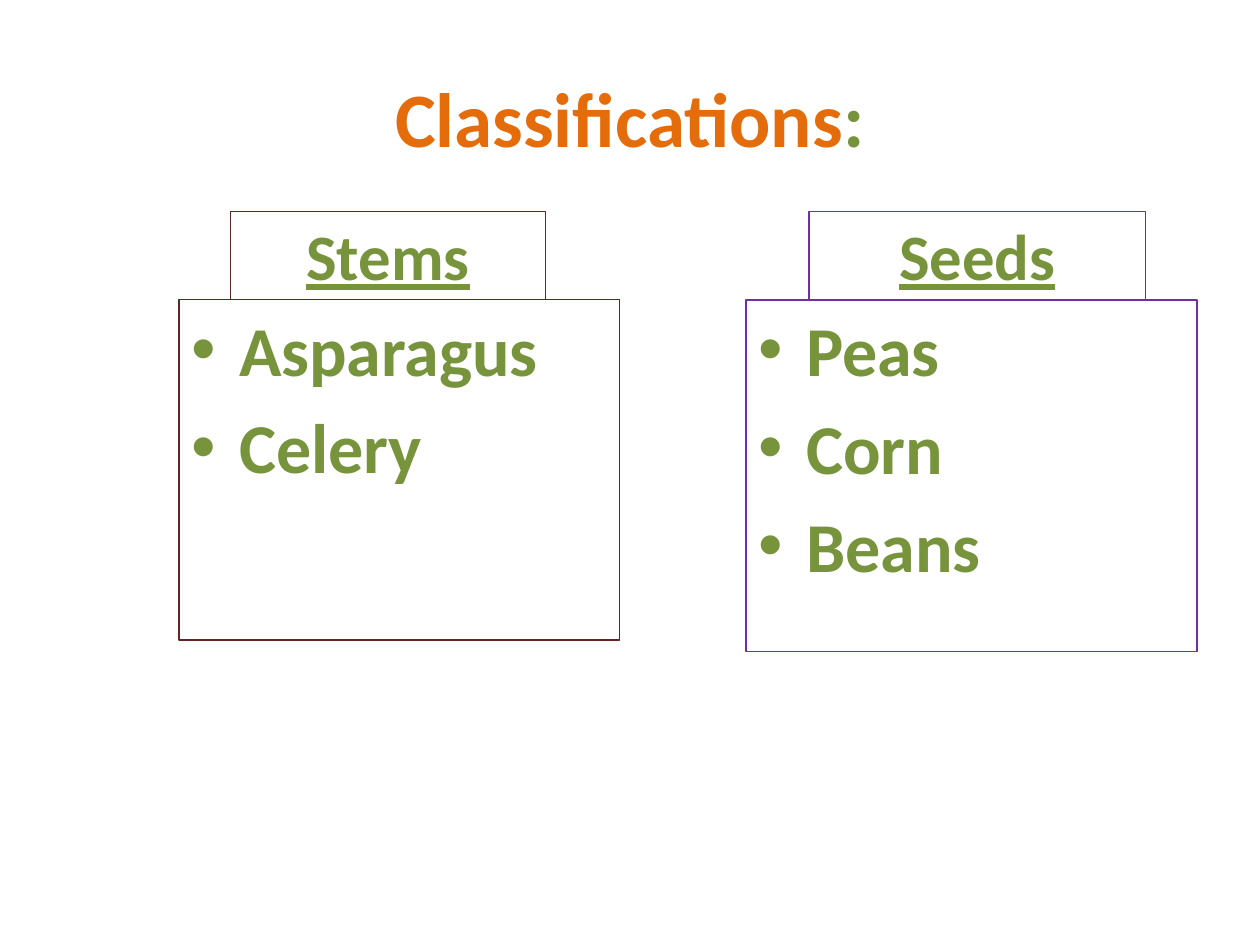
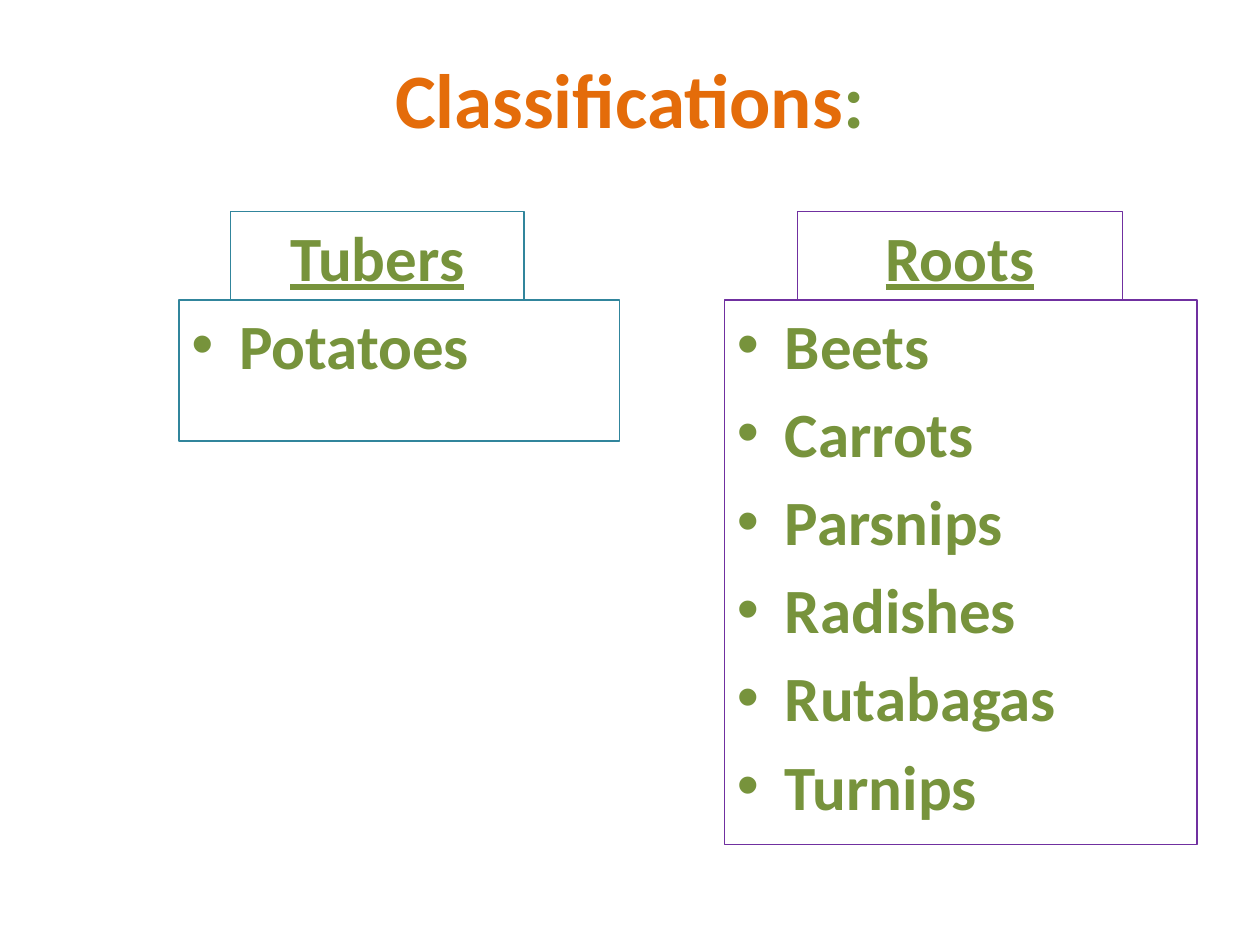
from pptx import Presentation
from pptx.dml.color import RGBColor
from pptx.enum.shapes import MSO_SHAPE
from pptx.enum.text import MSO_ANCHOR, PP_ALIGN
from pptx.util import Inches, Pt
from lxml import etree

RECT = MSO_SHAPE.RECTANGLE
TOP, MID, LOW = MSO_ANCHOR.TOP, MSO_ANCHOR.MIDDLE, MSO_ANCHOR.BOTTOM
LEFT, CENTER = PP_ALIGN.LEFT, PP_ALIGN.CENTER
TITLE_ONLY = 5

FONT = "Calibri"
INK = {"orange": "E46C0A", "green": "77933C", "wine": "632523",
       "violet": "7030A0", "teal": "31859C"}

WIDE, HIGH = 10, 7.5
EDGE = WIDE / 20
HEAD_TOP, LIST_TOP = 1.68, 2.38
INDENT = Inches(0.38)
GAP = 0.2  # space before a bullet, as a share of the text size

# Title height, then groups: name, head size, head (left, width),
# items, item size, list (left, width, height), line colour
SLIDES = [
    (1.25, [
        ("Stems", 37, (1.83, 2.5), ["Asparagus", "Celery"],
         40, (1.42, 3.5, 2.7), "wine"),
        ("Seeds", 37, (6.42, 2.67), ["Peas", "Corn", "Beans"],
         40, (5.92, 3.58, 2.79), "violet"),
    ]),
    (0.95, [
        ("Tubers", 36, (1.83, 2.33), ["Potatoes"],
         36, (1.42, 3.5, 1.12), "teal"),
        ("Roots", 36, (6.33, 2.58),
         ["Beets", "Carrots", "Parsnips", "Radishes", "Rutabagas", "Turnips"],
         36, (5.75, 3.75, 4.32), "violet"),
    ]),
]


def add_run(para, text, size, ink="green", under=None):
    run = para.add_run()
    run.text = text
    font = run.font
    font.name, font.size, font.bold = FONT, Pt(size), True
    font.underline = under
    font.color.rgb = RGBColor.from_string(INK[ink])


def add_box(slide, spot, ink, anchor):
    """Add an unfilled, outlined box and return its text frame."""
    box = slide.shapes.add_shape(RECT, *[Inches(n) for n in spot])
    box.shadow.inherit = False
    box.fill.background()
    box.line.color.rgb = RGBColor.from_string(INK[ink])
    box.line.width = Pt(0.75)
    frame = box.text_frame
    frame.word_wrap = True
    frame.vertical_anchor = anchor
    return frame


prs = Presentation()
prs.slide_width, prs.slide_height = Inches(WIDE), Inches(HIGH)

for tall, groups in SLIDES:
    slide = prs.slides.add_slide(prs.slide_layouts[TITLE_ONLY])
    title = slide.shapes.title
    title.left, title.top = Inches(EDGE), Inches(HIGH / 25)
    title.width, title.height = Inches(WIDE - 2 * EDGE), Inches(tall)
    title.text_frame.vertical_anchor = MID
    para = title.text_frame.paragraphs[0]
    para.alignment = CENTER
    add_run(para, "Classifications", 44, "orange")
    add_run(para, ":", 44)

    for name, big, (left, width), items, size, (x, w, h), ink in groups:
        spot = (left, HEAD_TOP, width, LIST_TOP - HEAD_TOP)
        para = add_box(slide, spot, ink, LOW).paragraphs[0]
        para.alignment = CENTER
        add_run(para, name, big, under=True)

        frame = add_box(slide, (x, LIST_TOP, w, h), ink, TOP)
        for i, item in enumerate(items):
            para = frame.add_paragraph() if i else frame.paragraphs[0]
            para.alignment = LEFT
            if i:
                para.space_before = Pt(size * GAP)
            props = para._p.get_or_add_pPr()
            props.set("marL", str(INDENT))
            props.set("indent", str(-INDENT))
            space = props.nsmap["a"]
            etree.SubElement(props, f"{{{space}}}buFont", typeface="Arial")
            etree.SubElement(props, f"{{{space}}}buChar", char="•")
            add_run(para, item, size)

prs.save("out.pptx")
